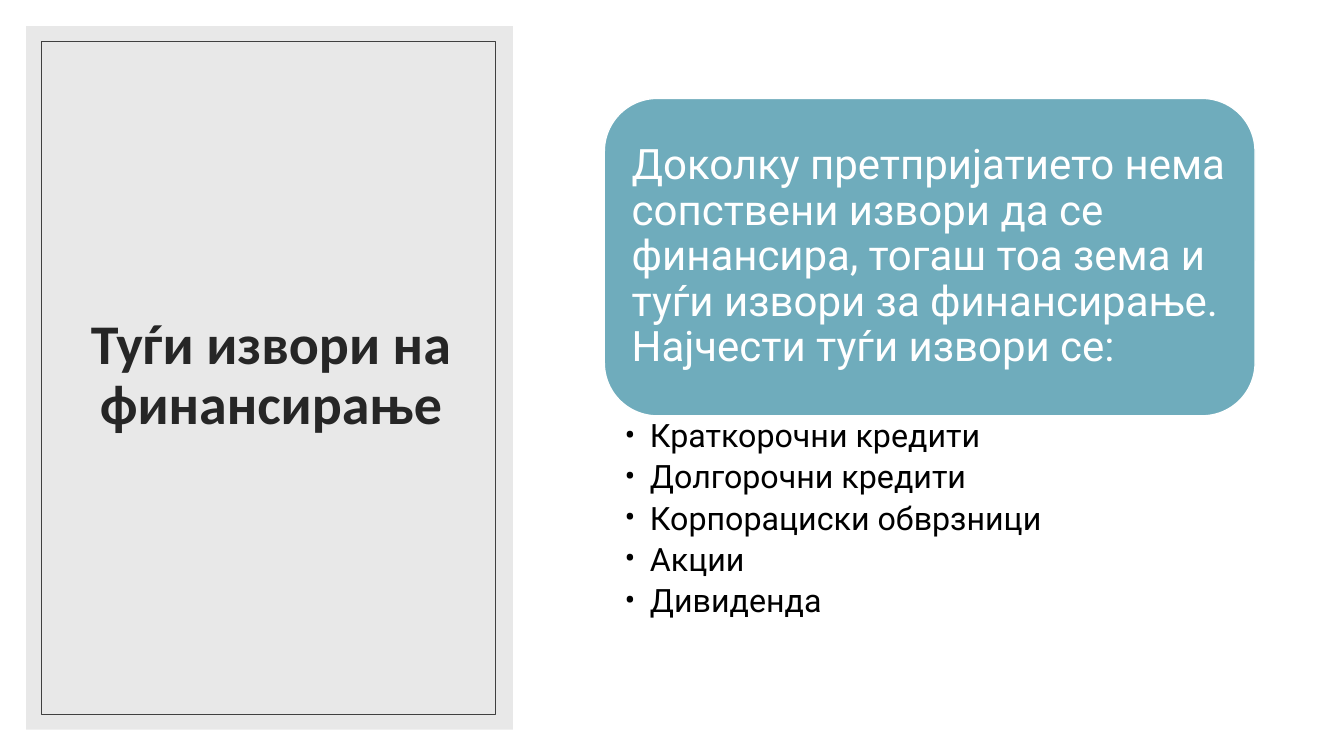
from lxml.etree import SubElement
from pptx import Presentation
from pptx.dml.color import RGBColor
from pptx.enum.shapes import MSO_SHAPE as Shape
from pptx.enum.text import MSO_ANCHOR as Anchor, PP_ALIGN as Align
from pptx.oxml.ns import qn
from pptx.util import Cm, Pt


def color(value):
    return RGBColor.from_string(value)


def write(shape, lines, font, anchor, insets, align=Align.LEFT, space_after=0):
    frame = shape.text_frame
    frame.word_wrap = True
    frame.vertical_anchor = anchor
    for side, inset in zip(("left", "top", "right", "bottom"), insets):
        setattr(frame, f"margin_{side}", Cm(inset))
    for index, line in enumerate(lines):
        paragraph = frame.paragraphs[0] if index == 0 else frame.add_paragraph()
        paragraph.alignment = align
        paragraph.line_spacing = 0.9
        paragraph.space_after = Pt(space_after)
        run = paragraph.add_run()
        run.text = line
        for name, value in font.items():
            if name == "color":
                run.font.color.rgb = color(value)
            else:
                setattr(run.font, name, value)
    return frame.paragraphs


presentation = Presentation()
presentation.slide_width = Cm(33.87)
presentation.slide_height = Cm(19.05)
slide = presentation.slides.add_slide(presentation.slide_layouts[6])

# White backdrop, panel, its thin frame and the rounded card
outlines = {
    "backdrop": (Shape.RECTANGLE, (0, 0, 33.87, 19.05), "FFFFFF", None, 0),
    "panel": (Shape.RECTANGLE, (0.66, 0.66, 12.27, 17.73), "D9D9D9", None, 0),
    "frame": (Shape.RECTANGLE, (1.04, 1.04, 11.45, 16.97), None, "404040", 0.5),
    "card": (Shape.ROUNDED_RECTANGLE, (15.23, 2.48, 16.4, 8), "6FACBC", "FFFFFF", 1),
}
shapes = {}
for name, (kind, box, fill, line, width) in outlines.items():
    shape = slide.shapes.add_shape(kind, *map(Cm, box))
    shape.shadow.inherit = False
    if fill:
        shape.fill.solid()
        shape.fill.fore_color.rgb = color(fill)
    else:
        shape.fill.background()
    if line:
        shape.line.color.rgb = color(line)
        shape.line.width = Pt(width)
    else:
        shape.line.fill.background()
    shapes[name] = shape

# Panel at 60 % opacity
panel_color = shapes["panel"].fill._xPr.find(f".//{qn('a:srgbClr')}")
SubElement(panel_color, qn("a:alpha"), val="60000")

# Title
title = slide.shapes.add_textbox(Cm(1.6), Cm(1.56), Cm(10.46), Cm(15.85))
title_font = {"name": "Calibri", "size": Pt(40), "bold": True, "color": "262626"}
write(title, ["Туѓи извори на финансирање"], title_font, Anchor.MIDDLE,
      (0.25, 0.13, 0.25, 0.13), Align.CENTER)

# Card text
card_font = {"name": "Roboto", "size": Pt(30), "color": "FFFFFF"}
card_text = ("Доколку претпријатието нема сопствени извори да се финансира, "
             "тогаш тоа зема и туѓи извори за финансирање. "
             "Најчести туѓи извори се:")
write(shapes["card"], [card_text], card_font, Anchor.MIDDLE, (0.3, 0.3, 0.3, 0.3))

# Bulleted list of sources
sources = ["Краткорочни кредити", "Долгорочни кредити", "Корпорациски обврзници",
           "Акции", "Дивиденда"]
source_list = slide.shapes.add_textbox(Cm(15.21), Cm(10.48), Cm(16.41), Cm(6.05))
list_font = {"name": "Roboto", "size": Pt(23), "color": "000000"}
for paragraph in write(source_list, sources, list_font, Anchor.TOP,
                       (0.53, 0.1, 0.58, 0.1), space_after=4.6):
    paragraph.level = 1
    properties = paragraph._p.get_or_add_pPr()
    properties.set("marL", str(Cm(0.64)))
    properties.set("indent", str(-Cm(0.64)))
    SubElement(properties, qn("a:buFont"), typeface="Roboto")
    SubElement(properties, qn("a:buChar"), char="•")

presentation.save("out.pptx")
